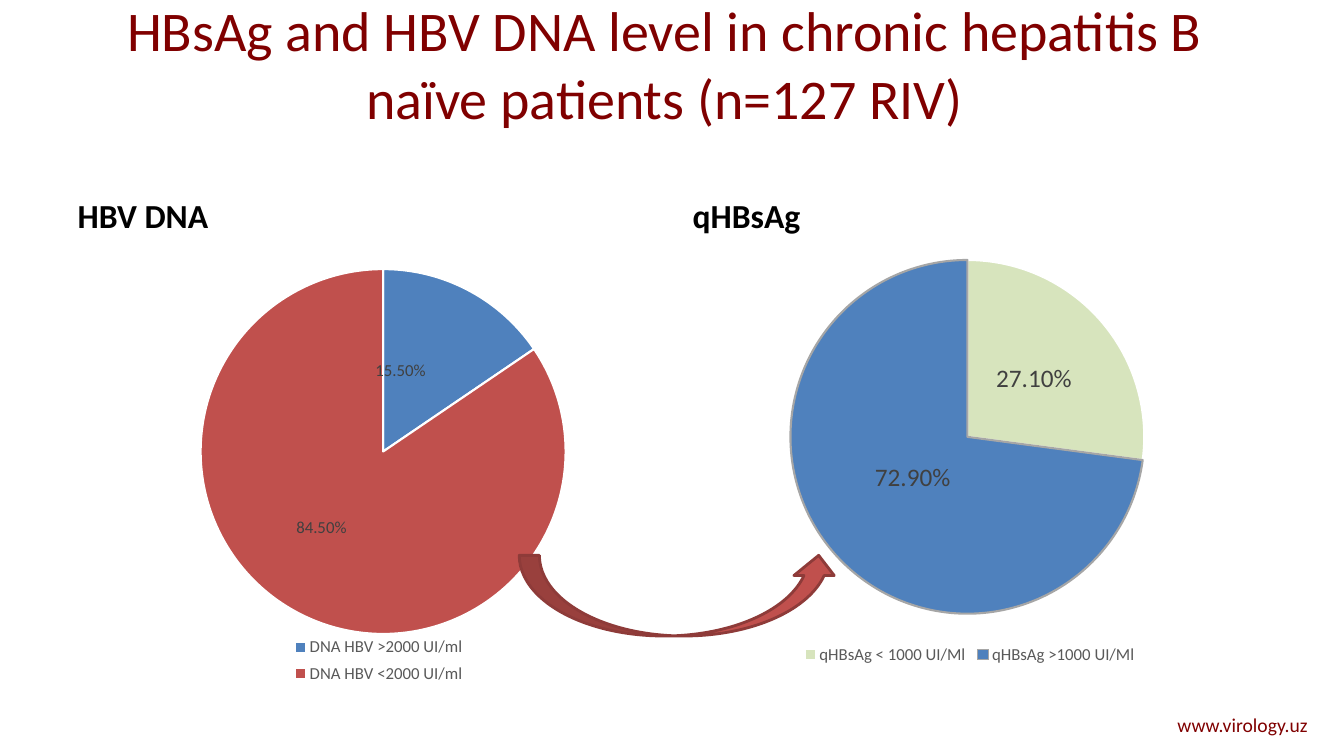
"""Build a slide comparing HBV DNA and qHBsAg levels in two pie charts."""
from lxml import etree
from pptx import Presentation
from pptx import util as u
from pptx.chart.data import CategoryChartData
from pptx.dml.color import RGBColor
from pptx.enum import chart as ch, shapes, text
from pptx.oxml import parse_xml
from pptx.oxml.ns import nsdecls

FONT = "Calibri"
COLORS = {"maroon": "800000", "black": "000000", "white": "FFFFFF", "blue": "4F81BD",
          "red": "C0504D", "dark_red": "8E3B39", "green": "D7E4BD", "grey": "A6A6A6",
          "label": "404040", "legend": "595959", "beige": "DDD9C3"}
TITLE = "HBsAg and HBV DNA level in chronic hepatitis B naïve patients (n=127 RIV)"
SITE = "www.virology.uz"
PIES = [
    {"heading": "HBV DNA", "heading_box": (0.67, 1.68, 5.89, 0.7), "heading_idx": 1,
     "box": (0.67, 2.38, 6.28, 4.56), "pie": (1.99, 2.67, 3.62, 3.62),
     "legend": (2.86, 6.26, 1.8, 0.58), "label_size": 12, "label_fill": "beige",
     "slices": [("DNA HBV >2000 UI/ml", 0.155, "blue", "white", (-0.04, 0)),
                ("DNA HBV <2000 UI/ml", 0.845, "red", "white", (-0.03, -0.01))]},
    {"heading": "qHBsAg", "heading_box": (6.77, 1.68, 5.89, 0.7), "heading_idx": 3,
     "box": (6.65, 2.38, 5.9, 4.26), "pie": (7.84, 2.58, 3.51, 3.51),
     "legend": (7.92, 6.36, 3.4, 0.27), "label_size": 18, "label_fill": None,
     "slices": [("qHBsAg < 1000 UI/Ml", 0.271, "green", "white", (0, 0)),
                ("qHBsAg >1000 UI/Ml", 0.729, "blue", "grey", (0.02, -0.04))]},
]


def rgb(name):
    return RGBColor.from_string(COLORS[name])


def inches(box):
    return [u.Inches(length) for length in box]


def style(font, size, color, bold=False):
    font.name, font.size, font.bold = FONT, u.Pt(size), bold
    font.color.rgb = rgb(color)


def write(holder, words, box, size, color, align, bold=False):
    holder.left, holder.top, holder.width, holder.height = inches(box)
    frame = holder.text_frame
    frame.text, frame.word_wrap = words, True
    frame.auto_size = text.MSO_AUTO_SIZE.NONE
    line = frame.paragraphs[0]
    line.alignment = align
    style(line.font, size, color, bold)


def layout_xml(settings):
    parts = "".join(f'<c:{tag} val="{value}"/>' for tag, value in settings)
    return parse_xml(f'<c:layout {nsdecls("c")}><c:manualLayout>{parts}'
                     '</c:manualLayout></c:layout>')


def place(element, inner, outer, target=None):
    x, y, w, h = inner
    left, top, width, height = outer
    settings = [("layoutTarget", target)] if target else []
    settings += [("xMode", "edge"), ("yMode", "edge"),
                 ("x", round((x - left) / width, 4)), ("y", round((y - top) / height, 4)),
                 ("w", round(w / width, 4)), ("h", round(h / height, 4))]
    for old in element.xpath("c:layout"):
        element.remove(old)
    layout = layout_xml(settings)
    if target:
        element.insert(0, layout)
    else:
        element.xpath("c:legendPos")[0].addnext(layout)


def label_slice(point, pie, offset):
    label = point.data_label
    style(label.font, pie["label_size"], "label")
    label.position = ch.XL_LABEL_POSITION.CENTER
    dlbl = point.data_label._dLbl
    extras = [layout_xml([("x", offset[0]), ("y", offset[1])]),
              parse_xml(f'<c:numFmt {nsdecls("c")} formatCode="0.00%" sourceLinked="0"/>')]
    if pie["label_fill"]:
        extras.append(parse_xml(
            f'<c:spPr {nsdecls("c", "a")}><a:solidFill><a:srgbClr '
            f'val="{COLORS[pie["label_fill"]]}"/></a:solidFill></c:spPr>'))
    for position, extra in enumerate(extras, 1):
        dlbl.insert(position, extra)


def add_pie(slide, pie):
    data = CategoryChartData(number_format="0.00%")
    data.categories = [entry[0] for entry in pie["slices"]]
    data.add_series("Series 1", [entry[1] for entry in pie["slices"]])
    chart = slide.shapes.add_chart(ch.XL_CHART_TYPE.PIE, *inches(pie["box"]), data).chart
    chart.has_title = False
    style(chart.font, 10, "black")
    chart.has_legend = True
    chart.legend.position = ch.XL_LEGEND_POSITION.BOTTOM
    chart.legend.include_in_layout = False
    style(chart.legend.font, 12, "legend")
    plot = chart.plots[0]
    plot.vary_by_categories = True
    for number, (_, _, fill, edge, offset) in enumerate(pie["slices"]):
        point = plot.series[0].points[number]
        point.format.fill.solid()
        point.format.fill.fore_color.rgb = rgb(fill)
        point.format.line.color.rgb = rgb(edge)
        point.format.line.width = u.Pt(1.5)
        label_slice(point, pie, offset)
    place(chart._chartSpace.xpath("c:chart/c:plotArea")[0], pie["pie"], pie["box"], "inner")
    place(chart._chartSpace.xpath("c:chart/c:legend")[0], pie["legend"], pie["box"])


def main():
    deck = Presentation()
    deck.slide_width, deck.slide_height = u.Inches(13.33), u.Inches(7.5)
    slide = deck.slides.add_slide(deck.slide_layouts[4])
    holders = {holder.placeholder_format.idx: holder for holder in slide.placeholders}
    for idx in (2, 4):
        holders[idx].element.getparent().remove(holders[idx].element)

    site = slide.shapes.add_textbox(0, 0, 0, 0)
    write(site, SITE, (7.22, 7.02, 5.85, 0.34), 14, "maroon", text.PP_ALIGN.RIGHT)
    write(holders[0], TITLE, (0.59, 0.19, 12, 0.87), 40, "maroon", text.PP_ALIGN.CENTER)
    holders[0].text_frame.vertical_anchor = text.MSO_ANCHOR.MIDDLE
    for pie in PIES:
        heading = holders[pie["heading_idx"]]
        write(heading, pie["heading"], pie["heading_box"], 24, "black",
              text.PP_ALIGN.LEFT, True)
        heading.text_frame.vertical_anchor = text.MSO_ANCHOR.BOTTOM
        add_pie(slide, pie)

    arrow = slide.shapes.add_shape(shapes.MSO_SHAPE.CURVED_UP_ARROW,
                                   *inches((5.15, 5.51, 3.17, 0.8)))
    arrow.shadow.inherit = False
    arrow.fill.solid()
    arrow.fill.fore_color.rgb = rgb("red")
    arrow.line.color.rgb = rgb("dark_red")
    arrow.line.width = u.Pt(2)
    deck.save("out.pptx")


if __name__ == "__main__":
    main()
